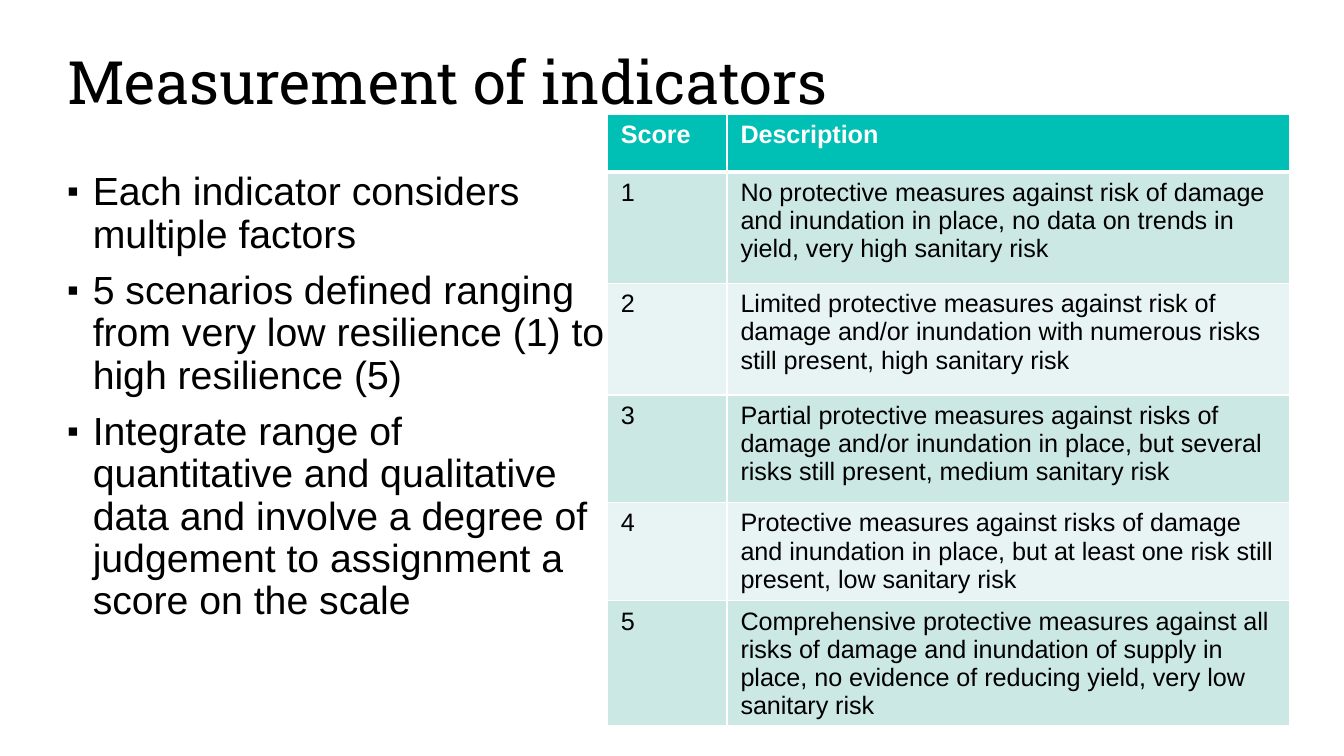
from dataclasses import dataclass

from lxml.etree import SubElement
from pptx import Presentation
from pptx.dml.color import RGBColor as Rgb
from pptx.enum.text import MSO_ANCHOR as Anchor, MSO_AUTO_SIZE as Fit, PP_ALIGN as Align
from pptx.oxml.ns import qn
from pptx.util import Inches, Pt


@dataclass
class Level:
    score: str
    text: str
    height: float


LEVELS = [
    Level("Score", "Description", 0.43),
    Level("1", "No protective measures against risk of damage and inundation in place, "
          "no data on trends in yield, very high sanitary risk", 0.83),
    Level("2", "Limited protective measures against risk of damage and/or inundation "
          "with numerous risks still present, high sanitary risk", 0.83),
    Level("3", "Partial protective measures against risks of damage and/or inundation "
          "in place, but several risks still present, medium sanitary risk", 0.8),
    Level("4", "Protective measures against risks of damage and inundation in place, "
          "but at least one risk still present, low sanitary risk", 0.73),
    Level("5", "Comprehensive protective measures against all risks of damage and "
          "inundation of supply in place, no evidence of reducing yield, "
          "very low sanitary risk", 0.93),
]
POINTS = [
    "Each indicator considers multiple factors",
    "5 scenarios defined ranging from very low resilience (1) to high resilience (5)",
    "Integrate range of quantitative and qualitative data and involve a degree of "
    "judgement to assignment a score on the scale",
]
WIDTHS = [0.89, 4.19]
WHITE, BLACK = "FFFFFF", "000000"
HEAD, BANDS = "00C0B5", ["E7F4F3", "CCE8E5"]


def color(code: str) -> Rgb:
    return Rgb.from_string(code)


def style(para, size: float, code: str, face: str = "Arial", bold: bool = False) -> None:
    for run in para.runs:
        font = run.font
        font.name, font.size, font.bold = face, Pt(size), bold
        font.color.rgb = color(code)


def place(shape, left: float, top: float, width: float, height: float) -> None:
    shape.left, shape.top = Inches(left), Inches(top)
    shape.width, shape.height = Inches(width), Inches(height)
    shape.text_frame.word_wrap = True
    shape.text_frame.auto_size = Fit.NONE
    shape.text_frame.margin_left = Inches(0.09)


def add_bullet(para) -> None:
    props = para._p.get_or_add_pPr()
    props.set("marL", str(Inches(0.19)))
    props.set("indent", str(Inches(-0.19)))
    SubElement(props, qn("a:buSzPct"), val="85000")
    SubElement(props, qn("a:buFont"), typeface="Arial")
    SubElement(props, qn("a:buChar"), char="▪")


def add_edge(cell, side: str, width: float) -> None:
    line = SubElement(cell._tc.get_or_add_tcPr(), qn(f"a:ln{side}"), w=str(Pt(width)))
    fill = SubElement(line, qn("a:solidFill"))
    SubElement(fill, qn("a:srgbClr"), val=WHITE)


def fill_cell(cell, text: str, row: int) -> None:
    head = row == 0
    cell.text_frame.text = text
    style(cell.text_frame.paragraphs[0], 13.5, WHITE if head else BLACK, bold=head)
    cell.margin_left = cell.margin_right = Inches(0.1)
    cell.margin_top, cell.margin_bottom = Inches(0.05), Inches(0.03)
    for side in "LRTB":
        add_edge(cell, side, 3 if head and side == "B" else 1)
    cell.fill.solid()
    cell.fill.fore_color.rgb = color(HEAD if head else BANDS[row % 2])


def add_title(shape) -> None:
    place(shape, 0.41, 0.3, 9.19, 0.67)
    frame = shape.text_frame
    frame.text = "Measurement of indicators"
    frame.vertical_anchor = Anchor.MIDDLE
    para = frame.paragraphs[0]
    para.alignment, para.line_spacing = Align.LEFT, 0.9
    style(para, 32, BLACK, "Roboto Slab")


def add_points(shape) -> None:
    place(shape, 0.41, 1.23, 4.21, 3.77)
    frame = shape.text_frame
    frame.vertical_anchor = Anchor.TOP
    for num, text in enumerate(POINTS):
        para = frame.add_paragraph() if num else frame.paragraphs[0]
        para.text = text
        para.line_spacing = 0.9
        para.space_before = Pt(7.5 if num else 0)
        add_bullet(para)
        style(para, 21, BLACK)


def add_scores(slide) -> None:
    total = sum(level.height for level in LEVELS)
    table = slide.shapes.add_table(
        len(LEVELS), len(WIDTHS), Inches(4.52), Inches(0.85),
        Inches(sum(WIDTHS)), Inches(total)).table
    for col, width in zip(table.columns, WIDTHS):
        col.width = Inches(width)
    for row, level in enumerate(LEVELS):
        table.rows[row].height = Inches(level.height)
        for col, text in enumerate([level.score, level.text]):
            fill_cell(table.cell(row, col), text, row)


def main() -> None:
    deck = Presentation()
    deck.slide_width = Inches(10)
    deck.slide_height = deck.slide_width * 9 // 16
    slide = deck.slides.add_slide(deck.slide_layouts[1])
    add_title(slide.shapes.title)
    add_points(slide.placeholders[1])
    add_scores(slide)
    deck.save("out.pptx")


if __name__ == "__main__":
    main()
